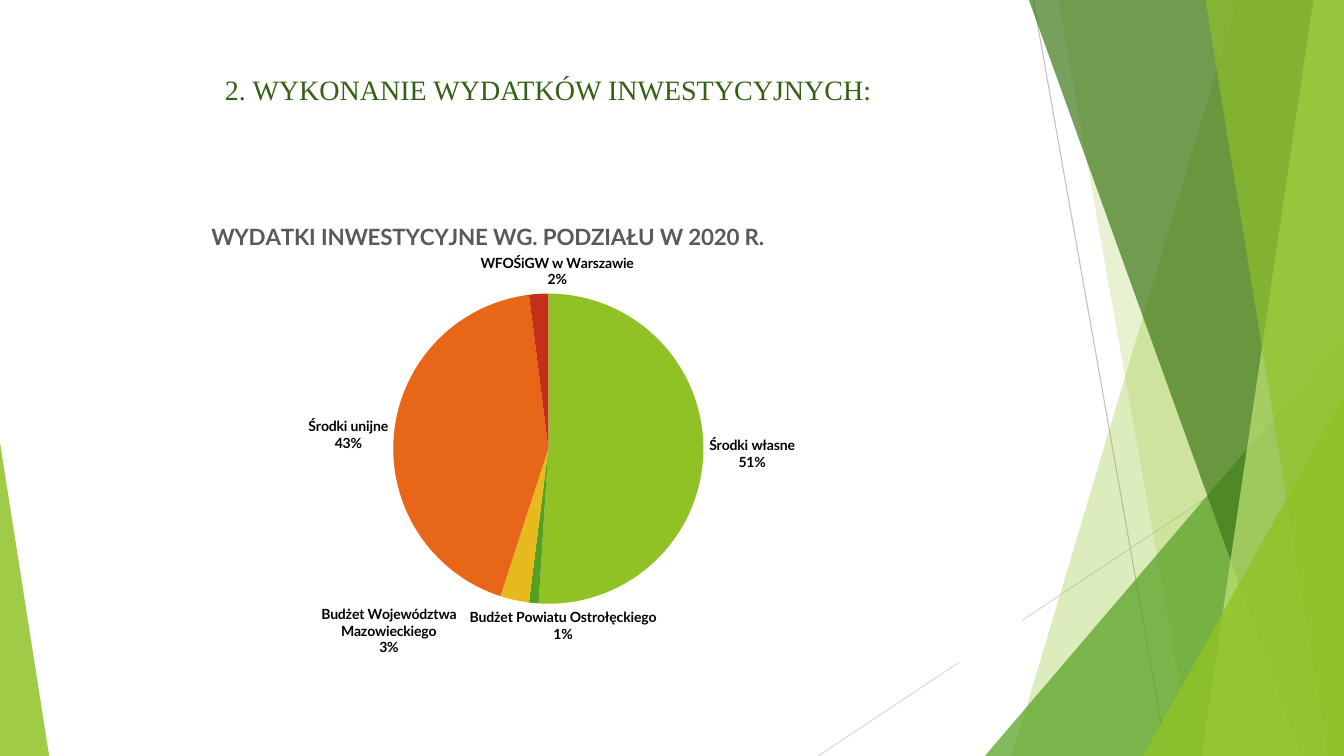
"""Build the slide on investment spending with a pie chart of funding sources."""
from copy import deepcopy

from pptx import Presentation
from pptx.chart.data import CategoryChartData
from pptx.dml.color import RGBColor
from pptx.enum.chart import XL_CHART_TYPE, XL_LABEL_POSITION
from pptx.enum.shapes import MSO_CONNECTOR, MSO_SHAPE
from pptx.enum.text import MSO_ANCHOR, PP_ALIGN
from pptx.oxml import parse_xml
from pptx.oxml.ns import nsdecls, qn
from pptx.util import Cm, Pt

TITLE = "2. WYKONANIE WYDATKÓW INWESTYCYJNYCH:"
CHART_TITLE = "WYDATKI INWESTYCYJNE WG. PODZIAŁU W 2020 R."
SOURCES = [
    ("Środki własne", 51, "90C226"),
    ("Budżet Powiatu Ostrołęckiego", 1, "54A021"),
    ("Budżet Województwa Mazowieckiego", 3, "E6B91E"),
    ("Środki unijne", 43, "E76618"),
    ("WFOŚiGW w Warszawie", 2, "C42F1A"),
]
LABEL_SHIFTS = {1: (0.13, 0), 2: (-0.06, 0), 3: (0, 0.04), 4: (0.02, 0)}

WIDTH, HEIGHT = 33.87, 19.05
TITLE_BOX = (1.88, 1.7, 23.88, 3.66)
CHART_BOX = (1.88, 5.36, 23.88, 11.33)
PIE_AREA = {"x": 0.33, "y": 0.18, "w": 0.34, "h": 0.69}
CHART_TITLE_AT = {"x": 0.14, "y": 0.01}

LINES = [
    (26.04, 0, 29.41, HEIGHT, "BFBFBF"),
    (WIDTH, 10.24, 20.62, HEIGHT, "D9D9D9"),
]
BANDS = [
    ("panel", (31.19, 25.5), "90C226", 30),
    ("panel", (26.67, 30.05), "90C226", 20),
    ("triangle", (24.82, 8.46, 9.05, 1), "54A021", 72),
    ("panel", (25.93, 32.79), "3F7819", 70),
    ("panel", (33.1, 30.28), "C0E474", 70),
    ("panel", (30.38, 33.48), "90C226", 65),
    ("triangle", (28.8, 9.98, 5.07, 1), "90C226", 80),
    ("triangle", (0, 11.15, 1.24, 0), "90C226", 85),
]

THEME = {
    "title": {"name": "Times New Roman", "size": 20, "bold": False, "color": "336014"},
    "chart": {"name": "Lato", "size": 10, "bold": False, "color": "000000"},
    "chart_title": {"name": "Lato", "size": 16, "bold": True, "color": "595959"},
    "labels": {"name": "Lato", "size": 10, "bold": True, "color": "000000"},
    "background": "FFFFFF",
    "line": 0.75,
}


def set_font(font, style):
    values = {**THEME[style], "size": Pt(THEME[style]["size"])}
    font.color.rgb = RGBColor.from_string(values.pop("color"))
    for key, value in values.items():
        setattr(font, key, value)


def add_line(s, x1, y1, x2, y2, color):
    line = s.shapes.add_connector(MSO_CONNECTOR.STRAIGHT, Cm(x1), Cm(y1), Cm(x2), Cm(y2))
    line.line.color.rgb = RGBColor.from_string(color)
    line.line.width = Pt(THEME["line"])
    line._element.spPr.append(parse_xml(f"<a:effectLst {nsdecls('a')}/>"))


def add_panel(s, top, bottom):
    corners = [(WIDTH, 0), (WIDTH, HEIGHT), (bottom, HEIGHT)]
    fb = s.shapes.build_freeform(Cm(top), 0)
    fb.add_line_segments([(Cm(x), Cm(y)) for x, y in corners], close=True)
    return fb.convert_to_shape()


def add_triangle(s, x, y, w, apex):
    sp = s.shapes.add_shape(MSO_SHAPE.ISOSCELES_TRIANGLE, Cm(x), Cm(y), Cm(w), Cm(HEIGHT - y))
    sp.adjustments[0] = apex
    return sp


def add_band(s, kind, geometry, color, opacity):
    sp = {"panel": add_panel, "triangle": add_triangle}[kind](s, *geometry)
    sp.shadow.inherit = False
    sp.line.fill.background()
    sp.fill.solid()
    sp.fill.fore_color.rgb = RGBColor.from_string(color)
    clr = sp._element.spPr.find(qn("a:solidFill"))[0]
    clr.append(parse_xml(f'<a:alpha {nsdecls("a")} val="{opacity * 1000}"/>'))


def add_title(s):
    tf = s.shapes.add_textbox(*map(Cm, TITLE_BOX)).text_frame
    tf.word_wrap = True
    tf.vertical_anchor = MSO_ANCHOR.TOP
    p = tf.paragraphs[0]
    p.alignment = PP_ALIGN.CENTER
    r = p.add_run()
    r.text = TITLE
    set_font(r.font, "title")


def layout_xml(places, target="", mode="edge"):
    inner = f'<c:layoutTarget val="{target}"/>' if target else ""
    if mode:
        inner += f'<c:xMode val="{mode}"/><c:yMode val="{mode}"/>'
    inner += "".join(f'<c:{key} val="{value}"/>' for key, value in places.items())
    return parse_xml(f"<c:layout {nsdecls('c')}><c:manualLayout>{inner}</c:manualLayout></c:layout>")


def set_layout(parent, layout, after=None):
    for old in parent.findall(qn("c:layout")):
        parent.remove(old)
    if after is None:
        parent.insert(0, layout)
    else:
        after.addnext(layout)


def add_labels(series):
    labels = series.data_labels
    values = {
        "show_percentage": True,
        "show_category_name": True,
        "show_value": False,
        "number_format": "0%",
        "number_format_is_linked": False,
        "position": XL_LABEL_POSITION.OUTSIDE_END,
    }
    for key, value in values.items():
        setattr(labels, key, value)
    set_font(labels.font, "labels")
    group = labels._element
    for leader in group.findall(qn("c:showLeaderLines")):
        group.remove(leader)
    separator = parse_xml(f"<c:separator {nsdecls('c')}>\n</c:separator>")
    group.find(qn("c:showBubbleSize")).addnext(separator)
    shared = list(group)
    group.append(parse_xml(f'<c:showLeaderLines {nsdecls("c")} val="0"/>'))
    for place, (i, (x, y)) in enumerate(LABEL_SHIFTS.items()):
        label = parse_xml(f'<c:dLbl {nsdecls("c")}><c:idx val="{i}"/></c:dLbl>')
        label.append(layout_xml({"x": x, "y": y}, mode=""))
        for el in shared:
            label.append(deepcopy(el))
        group.insert(place, label)


def add_pie(s):
    names, shares, colors = zip(*SOURCES)
    data = CategoryChartData()
    data.categories = names
    data.add_series("Series 1", shares)
    chart = s.shapes.add_chart(XL_CHART_TYPE.PIE, *map(Cm, CHART_BOX), data).chart
    chart.has_legend = False
    set_font(chart.font, "chart")
    chart.has_title = True
    title = chart.chart_title
    r = title.text_frame.paragraphs[0].add_run()
    r.text = CHART_TITLE
    set_font(r.font, "chart_title")
    title_el = title._element
    set_layout(title_el, layout_xml(CHART_TITLE_AT), title_el.find(qn("c:tx")))
    plot = chart.plots[0]
    plot.vary_by_categories = True
    set_layout(plot._element.getparent(), layout_xml(PIE_AREA, "inner"))
    series = plot.series[0]
    for i, color in enumerate(colors):
        fill = series.points[i].format.fill
        fill.solid()
        fill.fore_color.rgb = RGBColor.from_string(color)
    add_labels(series)
    chart._chartSpace.find(qn("c:txPr")).addprevious(parse_xml(
        f'<c:spPr {nsdecls("c", "a")}><a:solidFill><a:srgbClr val="{THEME["background"]}"/>'
        "</a:solidFill><a:ln><a:noFill/></a:ln></c:spPr>"))


def main():
    prs = Presentation()
    prs.slide_width, prs.slide_height = Cm(WIDTH), Cm(HEIGHT)
    s = prs.slides.add_slide(prs.slide_layouts[6])
    for line in LINES:
        add_line(s, *line)
    for band in BANDS:
        add_band(s, *band)
    add_title(s)
    add_pie(s)
    prs.save("out.pptx")


if __name__ == "__main__":
    main()
